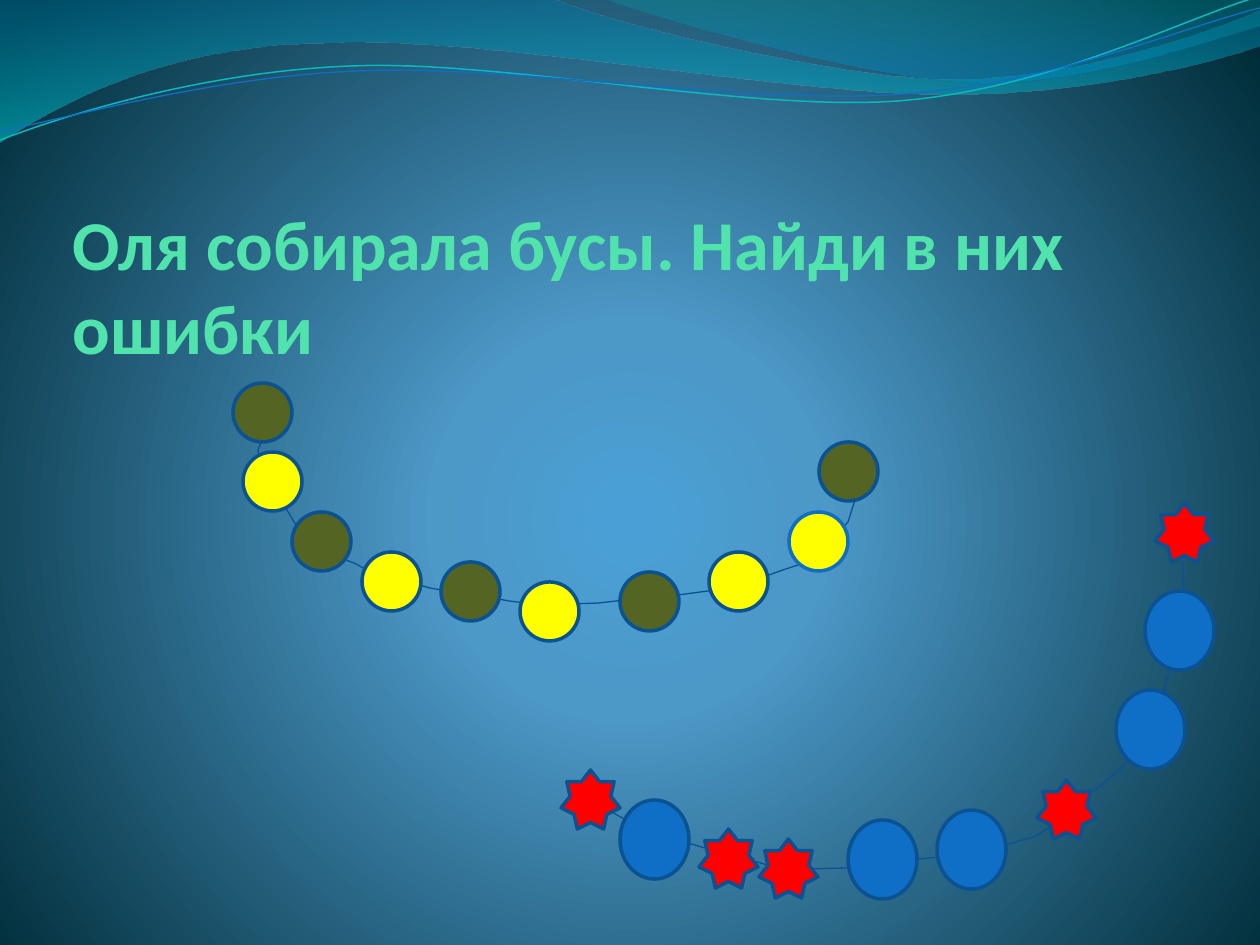
from lxml import etree
from pptx import Presentation, util as u
from pptx.dml.color import RGBColor
from pptx.enum import shapes as s, text as t
from pptx.oxml.ns import nsdecls, qn

PX = 914400 / 126
WIDTH, HEIGHT = 1260, 945
COLORS = {
    "glow": "4AA0D6", "mid": "4C98C7", "deep": "002C38",
    "wave_blue": "0074A1", "wave_teal": "00C6CF",
    "crest_teal": "00A1A9", "crest_blue": "008BBF",
    "cyan": "0AB8BF", "blue": "0F6FC6", "thread": "095295", "rim": "0B5292",
    "title": "50E3AC", "yellow": "FFFF00", "olive": "546422", "red": "FF0000",
}
ROUND, STAR = s.MSO_SHAPE.FLOWCHART_CONNECTOR, s.MSO_SHAPE.STAR_7_POINT
# Bead kinds: preset shape, width, height, fill
BEADS = {
    "olive": (ROUND, 59, 59, "olive"),
    "yellow": (ROUND, 59, 59, "yellow"),
    "star": (STAR, 59, 59, "red"),
    "oval": (ROUND, 69, 79, "blue"),
}


def emu(px):
    return u.Emu(round(px * PX))


def rgb(name):
    return RGBColor.from_string(COLORS[name])


def set_all(target, values):
    for name, value in values.items():
        setattr(target, name, value)


def paint_gradient(fill, holder, stops, direction):
    """Stops are (percent, colour, opacity percent)."""
    fill.gradient()
    marks = "".join(
        f'<a:gs pos="{pos * 1000}"><a:srgbClr val="{COLORS[color]}">'
        f'<a:alpha val="{alpha * 1000}"/></a:srgbClr></a:gs>'
        for pos, color, alpha in stops)
    gradient = etree.fromstring(
        f'<a:gradFill {nsdecls("a")} rotWithShape="1">'
        f'<a:gsLst>{marks}</a:gsLst>{direction}</a:gradFill>')
    old = next(holder.iter(qn("a:gradFill")))
    old.getparent().replace(old, gradient)


def outline(shape, color, width):
    shape.line.color.rgb = rgb(color)
    shape.line.width = u.Pt(width)


def trace(start, parts, steps=24):
    """Points along a path of line ends (2 numbers) and cubic curves (6)."""
    points = [start]
    for part in parts:
        if len(part) == 2:
            points.append(part)
            continue
        nodes = [points[-1], part[:2], part[2:4], part[4:]]
        for step in range(1, steps + 1):
            f = step / steps
            weights = ((1 - f) ** 3, 3 * f * (1 - f) ** 2, 3 * f * f * (1 - f), f ** 3)
            points.append(tuple(
                sum(w * node[axis] for w, node in zip(weights, nodes)) for axis in (0, 1)))
    return points


def add_outline(slide, box, points, close):
    spots = [(emu(box[0] + x), emu(box[1] + y)) for x, y in points]
    builder = slide.shapes.build_freeform(*spots[0], scale=1.0)
    builder.add_line_segments(spots[1:], close=close)
    shape = builder.convert_to_shape()
    shape.shadow.inherit = False
    return shape


def add_line(slide, box, points, color, width):
    line = add_outline(slide, box, points, False)
    line.fill.background()
    outline(line, color, width)
    return line


def add_backdrop(slide):
    paint_gradient(
        slide.background.fill, slide.element,
        [(0, "glow", 100), (25, "mid", 100), (100, "deep", 100)],
        '<a:path path="circle"><a:fillToRect l="10000" t="110000" r="10000" b="100000"/></a:path>')


def add_waves(slide, box):
    # Filled bands
    bands = [
        ((0, 0), [(554, -1), (600, 21, 837, 79, 955, 79), (1075, 79, 1207, 33, 1260, 11),
                  (1261, 45), (1238, 55, 1096, 96, 940, 94), (784, 94, 481, 35, 324, 43),
                  (163, 45, 58, 105, -1, 142)],
         [(0, "wave_blue", 45), (100, "wave_teal", 55)]),
        ((604, -1), [(641, 14, 859, 78, 969, 82), (1079, 87, 1211, 40, 1260, 26), (1260, 0)],
         [(0, "crest_teal", 30), (80, "crest_blue", 45)]),
    ]
    for start, parts, stops in bands:
        band = add_outline(slide, box, trace(start, parts), True)
        paint_gradient(band.fill, band.element, stops, '<a:lin ang="5400000" scaled="1"/>')
        band.line.fill.background()
    # Thin ripples
    ripples = [
        ((0, 140), [(60, 117, 199, 72, 349, 66), (498, 59, 747, 112, 898, 101),
                    (1050, 89, 1182, 19, 1257, -3)], "cyan", 0.85),
        ((0, 131), [(59, 121, 207, 77, 357, 71), (508, 64, 752, 106, 903, 94),
                    (1053, 84, 1186, 26, 1260, 8)], "blue", 0.75),
    ]
    for start, parts, color, width in ripples:
        add_line(slide, box, trace(start, parts), color, width)


def add_title(slide, box):
    title = slide.shapes.add_textbox(*map(emu, box))
    frame = title.text_frame
    set_all(frame, {
        "word_wrap": True, "vertical_anchor": t.MSO_ANCHOR.BOTTOM,
        "margin_left": 0, "margin_right": 0, "margin_top": 0, "margin_bottom": 0})
    words = frame.paragraphs[0].add_run()
    words.text = "Оля собирала бусы. Найди в них ошибки"
    set_all(words.font, {"name": "Calibri", "size": u.Pt(40), "bold": True})
    words.font.color.rgb = rgb("title")


def add_necklace(slide, box, thread_points, beads):
    """Beads are (kind, left, top) and an optional rim colour."""
    thread = add_line(slide, box, thread_points, "thread", 0.75)
    etree.SubElement(thread.line._get_or_add_ln(), qn("a:tailEnd"), type="arrow")
    for kind, left, top, *rim in beads:
        preset, width, height, color = BEADS[kind]
        bead = slide.shapes.add_shape(
            preset, *map(emu, (box[0] + left, box[1] + top, width, height)))
        bead.shadow.inherit = False
        bead.fill.solid()
        bead.fill.fore_color.rgb = rgb(color)
        outline(bead, rim[0] if rim else "rim", 2)


ROUND_THREAD = [
    (35, 53), (28, 70), (31, 92), (43, 113), (57, 130), (66, 145), (76, 156), (95, 168),
    (113, 179), (124, 183), (139, 191), (153, 195), (200, 208), (240, 215), (263, 218),
    (279, 221), (313, 225), (369, 223), (403, 219), (448, 215), (478, 211), (502, 206),
    (525, 199), (539, 195), (550, 191), (571, 184), (585, 177), (598, 164), (618, 142),
    (624, 123), (623, 90), (614, 74), (604, 66)]
ROUND_BEADS = [
    ("olive", 3, 3), ("yellow", 13, 72), ("olive", 62, 132), ("yellow", 132, 172),
    ("olive", 211, 182), ("yellow", 290, 202), ("olive", 390, 192), ("yellow", 479, 172),
    ("yellow", 559, 132, "blue"), ("olive", 589, 62)]
STAR_THREAD = [
    (39, 301), (50, 311), (71, 323), (99, 337), (128, 343), (158, 352), (197, 362), (214, 367),
    (243, 369), (291, 368), (320, 363), (390, 356), (439, 348), (449, 344), (474, 337),
    (490, 327), (507, 315), (529, 295), (545, 282), (565, 265), (575, 248), (588, 232),
    (602, 202), (609, 170), (616, 151), (624, 124), (622, 33), (616, 18)]
STAR_BEADS = [
    ("star", 1, 270), ("star", 139, 329), ("star", 199, 339), ("star", 477, 280),
    ("star", 595, 3), ("oval", 60, 300), ("oval", 288, 320), ("oval", 377, 310),
    ("oval", 556, 190), ("oval", 585, 91)]


def main():
    deck = Presentation()
    set_all(deck, {"slide_width": emu(WIDTH), "slide_height": emu(HEIGHT)})
    slide = deck.slides.add_slide(deck.slide_layouts[6])
    add_backdrop(slide)
    add_waves(slide, (0, 0))
    add_title(slide, (73, 181, 1071, 188))
    add_necklace(slide, (230, 380), ROUND_THREAD, ROUND_BEADS)
    add_necklace(slide, (560, 500), STAR_THREAD, STAR_BEADS)
    deck.save("out.pptx")


if __name__ == "__main__":
    main()
